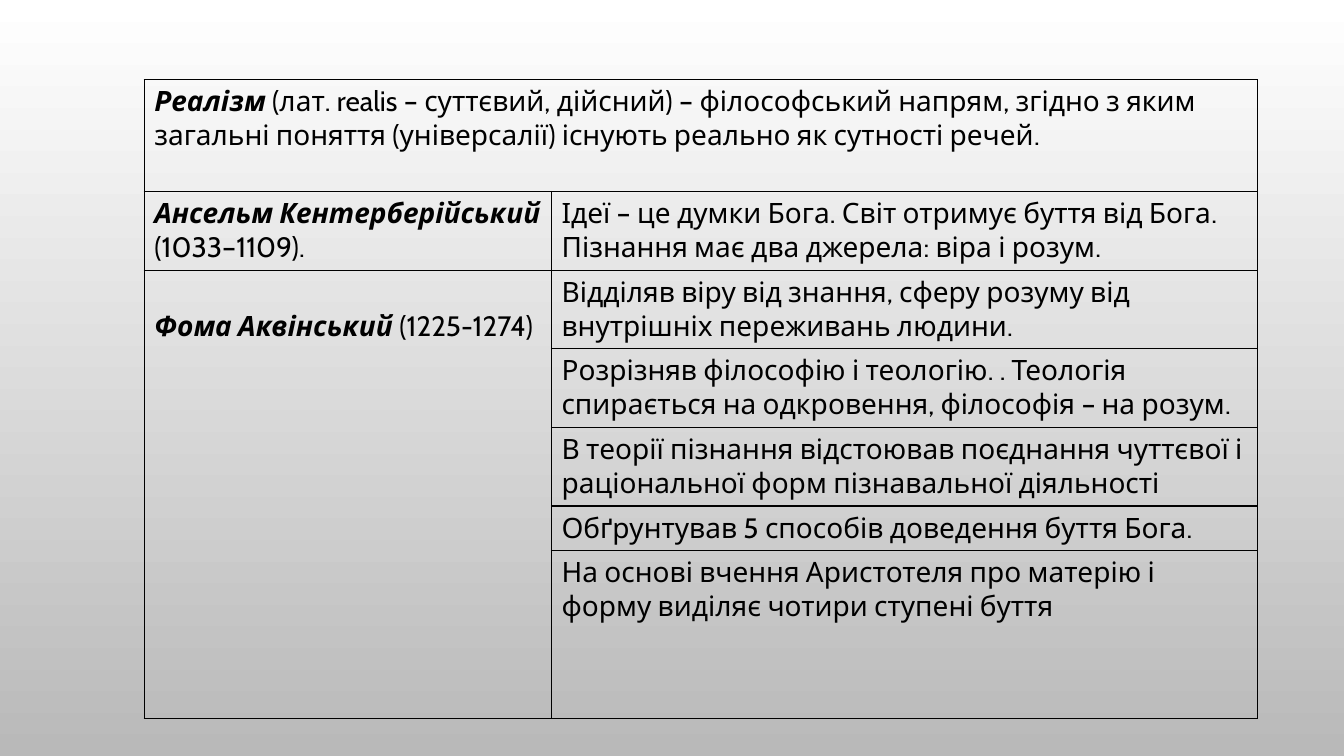
from lxml import etree
from pptx import Presentation
from pptx.dml.color import RGBColor
from pptx.oxml.ns import qn
from pptx.util import Inches, Pt

# Content: (bold italic term, plain text) for each cell
DEFINITION = ("Реалізм", " (лат. realis – суттєвий, дійсний) – філософський напрям, "
              "згідно з яким загальні поняття (універсалії) існують реально як сутності речей.")
PHILOSOPHERS = [
    (("Ансельм Кентерберійський", " (1033–1109)."), [
        "Ідеї – це думки Бога. Світ отримує буття від Бога. Пізнання має два джерела: віра і розум.",
    ]),
    (("Фома Аквінський", " (1225-1274)"), [
        "Відділяв віру від знання, сферу розуму від внутрішніх переживань людини.",
        "Розрізняв філософію і теологію. . Теологія спирається на одкровення, філософія – на розум.",
        "В теорії пізнання відстоював поєднання чуттєвої і раціональної форм пізнавальної діяльності",
        "Обґрунтував 5 способів доведення буття Бога.",
        "На основі вчення Аристотеля про матерію і форму виділяє чотири ступені буття",
    ]),
]

# Format
COLORS = {"text": "000000", "border": "000000", "top": "FFFFFF", "bottom": "B9B9B9"}
FONT = {"name": "Cabin", "size": Pt(20)}
BORDER_WIDTH = Pt(1)
LEFT, TOP = 1.43, 0.79
COLUMN_WIDTHS = [4.04, 7]
ROW_HEIGHTS = [1.11, 0.78, 0.78, 0.78, 0.78, 0.43, 1.67]
NAME_RIGHT_MARGIN = 0.08
AQUINAS_TOP_MARGIN = 0.39


def write(cell, term, text):
    paragraph = cell.text_frame.paragraphs[0]
    for words, emphasis in ((term, True), (text, False)):
        if not words:
            continue
        run = paragraph.add_run()
        run.text = words
        for key, value in {**FONT, "bold": emphasis, "italic": emphasis}.items():
            setattr(run.font, key, value)
        run.font.color.rgb = RGBColor.from_string(COLORS["text"])


def add_borders(cell):
    properties = cell._tc.get_or_add_tcPr()
    for index, side in enumerate(("a:lnL", "a:lnR", "a:lnT", "a:lnB")):
        line = etree.Element(qn(side), w=str(BORDER_WIDTH))
        fill = etree.SubElement(line, qn("a:solidFill"))
        etree.SubElement(fill, qn("a:srgbClr"), val=COLORS["border"])
        properties.insert(index, line)


# Slide and gradient background
prs = Presentation()
prs.slide_width, prs.slide_height = Inches(13.33), Inches(7.5)
slide = prs.slides.add_slide(prs.slide_layouts[6])
background = slide.background.fill
background.gradient()
background.gradient_angle = 270
for stop, name in zip(background.gradient_stops, ("top", "bottom")):
    stop.color.rgb = RGBColor.from_string(COLORS[name])

# Table grid
table = slide.shapes.add_table(
    len(ROW_HEIGHTS), len(COLUMN_WIDTHS), Inches(LEFT), Inches(TOP),
    Inches(sum(COLUMN_WIDTHS)), Inches(sum(ROW_HEIGHTS))).table
table.first_row = table.horz_banding = False
for column, width in zip(table.columns, COLUMN_WIDTHS):
    column.width = Inches(width)
for row, height in zip(table.rows, ROW_HEIGHTS):
    row.height = Inches(height)
    for cell in row.cells:
        cell.fill.background()
        add_borders(cell)

# Definition across the top, then each philosopher beside his ideas
table.cell(0, 0).merge(table.cell(0, 1))
write(table.cell(0, 0), *DEFINITION)
first = 1
for philosopher, ideas in PHILOSOPHERS:
    name_cell = table.cell(first, 0)
    name_cell.margin_right = Inches(NAME_RIGHT_MARGIN)
    if len(ideas) > 1:
        name_cell.merge(table.cell(first + len(ideas) - 1, 0))
        name_cell.margin_top = Inches(AQUINAS_TOP_MARGIN)
    write(name_cell, *philosopher)
    for offset, idea in enumerate(ideas):
        write(table.cell(first + offset, 1), "", idea)
    first += len(ideas)

prs.save("out.pptx")
